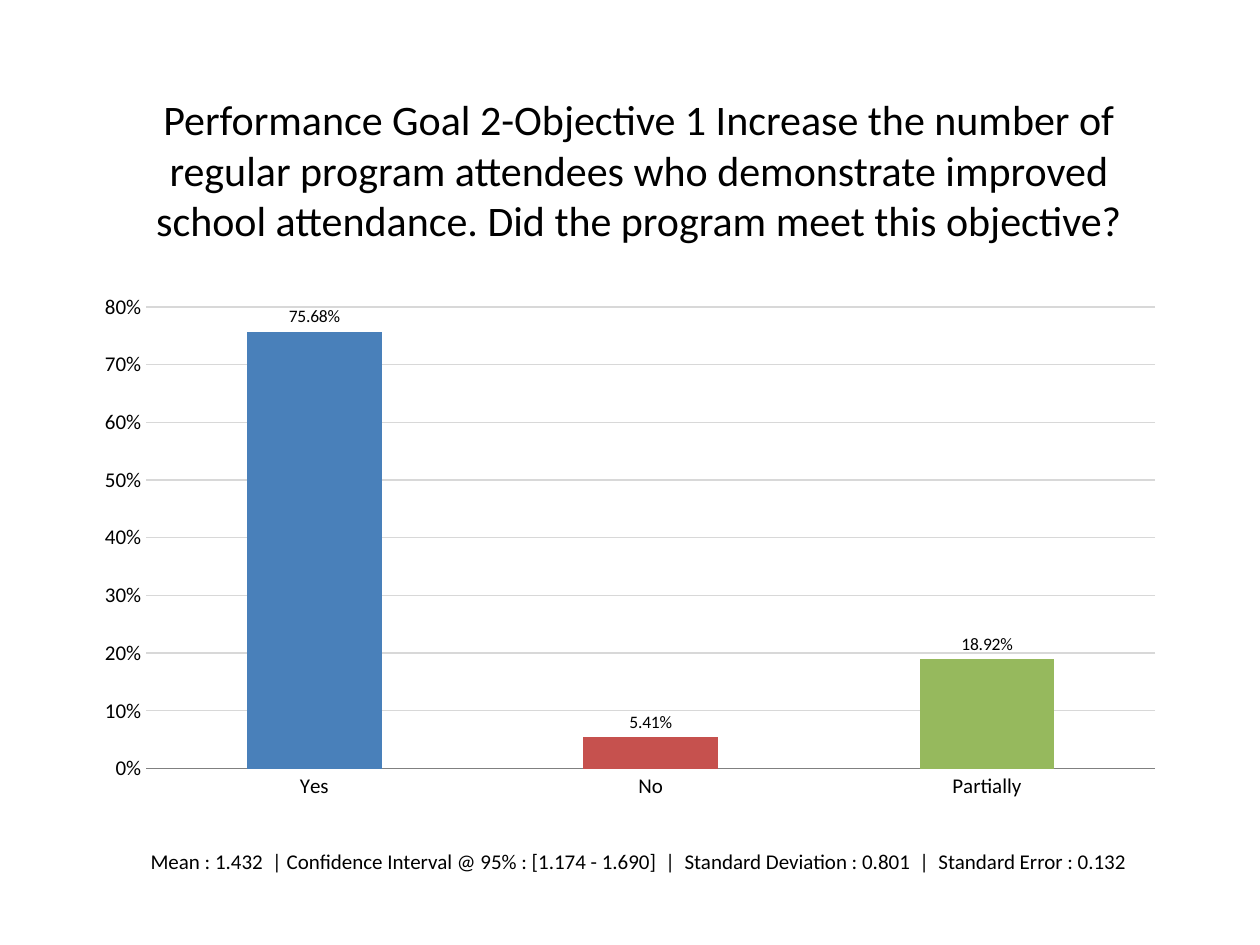
from pptx import Presentation
from pptx.chart.data import CategoryChartData
from pptx.dml.color import RGBColor
from pptx.enum.chart import XL_CHART_TYPE as Kind, XL_LABEL_POSITION as Spot, XL_TICK_MARK as Tick
from pptx.enum.shapes import MSO_SHAPE as Form
from pptx.enum.text import MSO_ANCHOR as Anchor, PP_ALIGN as Align
from pptx.util import Emu, Pt

PX = 914400 / 126
FONT = "Calibri"
BLACK = RGBColor(0x00, 0x00, 0x00)
GRAY = RGBColor(0x80, 0x80, 0x80)
PALE = RGBColor(0xD8, 0xD8, 0xD8)
BLUE = RGBColor(0x49, 0x80, 0xBA)
RED = RGBColor(0xC6, 0x51, 0x4E)
GREEN = RGBColor(0x96, 0xB9, 0x5D)

TITLE = ("Performance Goal 2-Objective 1 Increase the number of regular program "
         "attendees who demonstrate improved school attendance. "
         "Did the program meet this objective?")
STATS = ("Mean : 1.432  | Confidence Interval @ 95% : [1.174 - 1.690]  |  "
         "Standard Deviation : 0.801  |  Standard Error : 0.132")
BARS = [("Yes", 0.7568, BLUE), ("No", 0.0541, RED), ("Partially", 0.1892, GREEN)]


def px(*nums):
    return [Emu(round(n * PX)) for n in nums]


def style(font, size):
    font.name = FONT
    font.size = Pt(size)
    font.color.rgb = BLACK


deck = Presentation()
deck.slide_width, deck.slide_height = px(1260, 945)
slide = deck.slides.add_slide(deck.slide_layouts[6])

# Title above the chart, statistics below it
for text, top, size in [(TITLE, 82, 24), (STATS, 774, 12)]:
    box = slide.shapes.add_shape(Form.ROUNDED_RECTANGLE, *px(92, top, 1094, 175))
    box.shadow.inherit = False
    box.fill.background()
    box.line.fill.background()
    frame = box.text_frame
    frame.word_wrap = True
    frame.vertical_anchor = Anchor.MIDDLE
    frame.text = text
    para = frame.paragraphs[0]
    para.alignment = Align.CENTER
    style(para.runs[0].font, size)

# Column chart of the answers
data = CategoryChartData(number_format="0.00%")
data.categories = [name for name, share, color in BARS]
data.add_series("Series 1", [share for name, share, color in BARS])
chart = slide.shapes.add_chart(Kind.COLUMN_CLUSTERED, *px(83, 284, 1094, 525), data).chart
style(chart.font, 18)
chart.has_title = False
chart.has_legend = False

names, scale = chart.category_axis, chart.value_axis
for axis in (names, scale):
    axis.major_tick_mark = axis.minor_tick_mark = Tick.NONE
    style(axis.tick_labels.font, 12)
names.format.line.color.rgb = GRAY
names.format.line.width = Pt(0.75)

scale.minimum_scale, scale.maximum_scale, scale.major_unit = 0, 0.8, 0.1
scale.tick_labels.number_format = "0%"
scale.tick_labels.number_format_is_linked = False
scale.format.line.fill.background()
scale.has_major_gridlines = True
grid = scale.major_gridlines.format.line
grid.color.rgb = PALE
grid.width = Pt(0.75)

plot = chart.plots[0]
plot.gap_width = 150
plot.vary_by_categories = False
plot.has_data_labels = True
labels = plot.data_labels
labels.show_value = True
labels.number_format = "0.00%"
labels.number_format_is_linked = False
labels.position = Spot.OUTSIDE_END
style(labels.font, 10)

for i, (name, share, color) in enumerate(BARS):
    fill = plot.series[0].points[i].format.fill
    fill.solid()
    fill.fore_color.rgb = color

deck.save("out.pptx")
